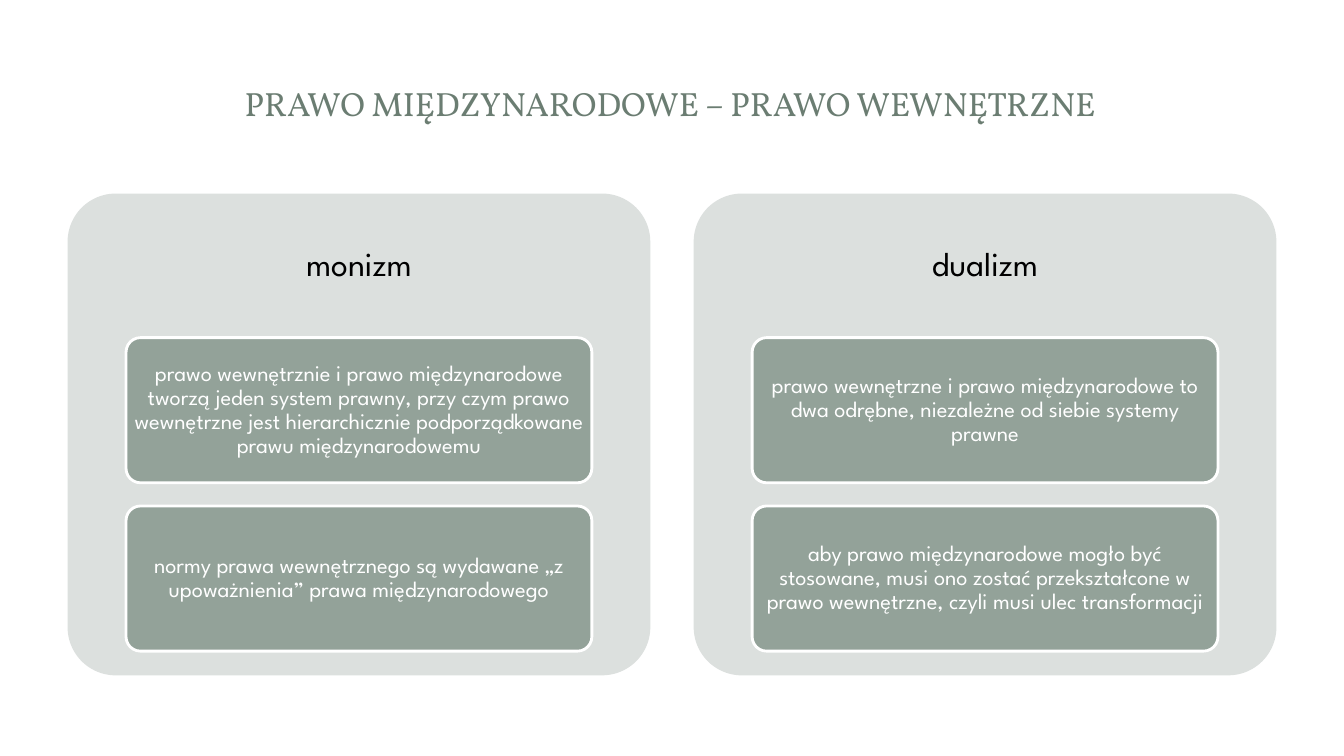
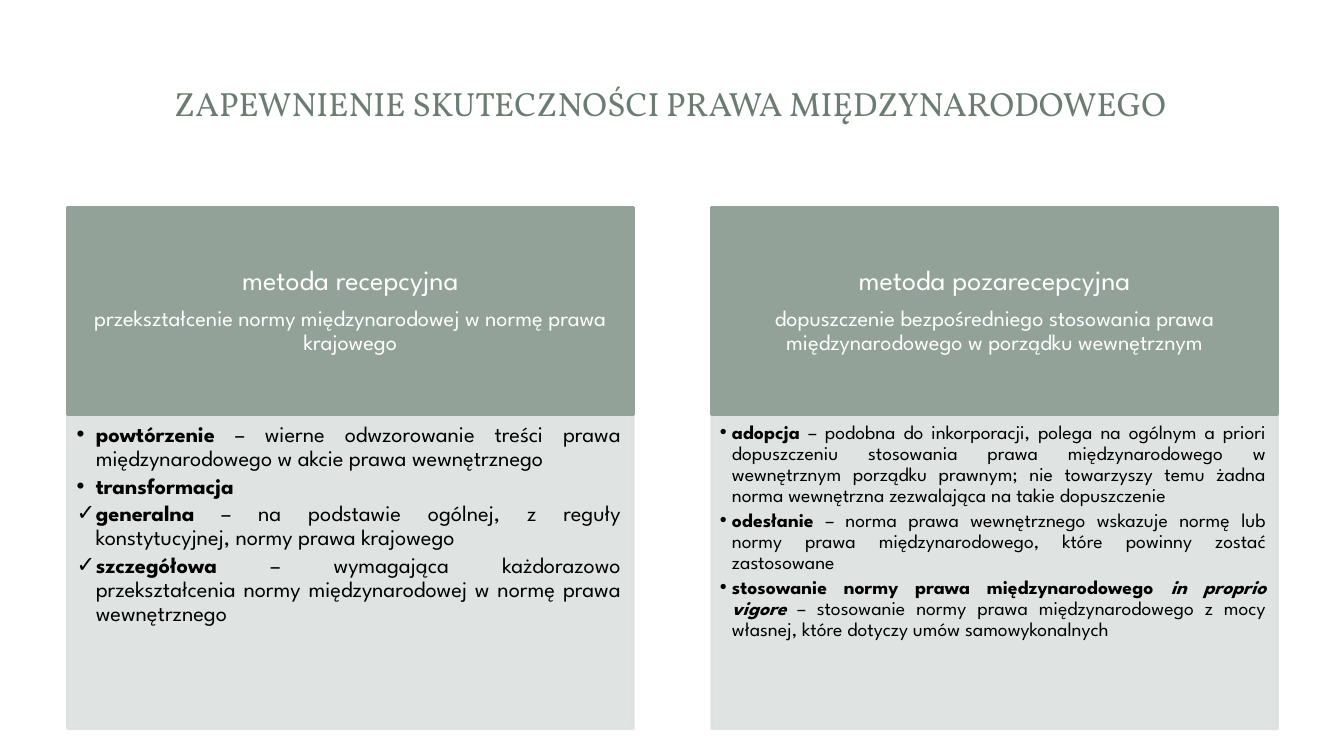
from lxml import etree
from pptx import Presentation
from pptx import util as u
from pptx.dml.color import RGBColor
from pptx.enum import shapes, text
from pptx.oxml.ns import qn

PX = 9144  # EMU in one px, 100 px to the inch
WHITE = RGBColor(0xFF, 0xFF, 0xFF)
BLACK = RGBColor(0x00, 0x00, 0x00)
SAGE = RGBColor(0x93, 0xA2, 0x99)
MIST = RGBColor(0xDC, 0xE0, 0xDE)
MOSS = RGBColor(0x6B, 0x7D, 0x72)
TITLE_FONT = "Vollkorn"
BODY_FONT = "League Spartan"
TWO_CONTENT, TITLE_ONLY = 3, 5
BOLD, BOLD_ITALIC, PLAIN = "b", "bi", ""


def px(*lengths):
    return [u.Emu(length * PX) for length in lengths]


def set_opacity(box, percent):
    """Make the fill and the line of a box partly transparent."""
    for color in box.element.spPr.iter(qn("a:srgbClr")):
        etree.SubElement(color, qn("a:alpha"), val=str(percent * 1000))


class Deck:
    def __init__(self):
        self.file = Presentation()
        self.file.slide_width, self.file.slide_height = px(1333, 750)
        self.page = None

    def add_page(self, layout, title):
        self.page = self.file.slides.add_slide(self.file.slide_layouts[layout])
        box = self.page.shapes.title
        self.place(box, 62, 45, 1205, 114)
        self.prepare(box.text_frame, (10, 5, 10, 5))
        self.set_words(box.text_frame.paragraphs[0], title, 24, MOSS, TITLE_FONT)

    def place(self, box, left, top, width, height):
        box.left, box.top, box.width, box.height = px(left, top, width, height)

    def prepare(self, frame, margins, anchor=text.MSO_ANCHOR.MIDDLE):
        frame.word_wrap = True
        frame.auto_size = text.MSO_AUTO_SIZE.NONE
        frame.vertical_anchor = anchor
        (frame.margin_left, frame.margin_top,
         frame.margin_right, frame.margin_bottom) = px(*margins)

    def set_words(self, para, words, size, color, font=BODY_FONT):
        para.text = words
        para.alignment = text.PP_ALIGN.CENTER
        self.style(para, size, color, font)

    def style(self, para, size, color, font=BODY_FONT):
        para.font.size = u.Pt(size)
        para.font.name = font
        para.font.color.rgb = color

    def space(self, para, after):
        para.line_spacing = 0.9
        para.space_before = u.Pt(0)
        para.space_after = u.Pt(after)

    def set_lines(self, frame, lines, color):
        """Fill a frame with centred (words, size) lines."""
        for index, (words, size) in enumerate(lines):
            para = frame.add_paragraph() if index else frame.paragraphs[0]
            self.space(para, 7 if index < len(lines) - 1 else 0)
            self.set_words(para, words, size, color)

    def block(self, kind, place, fill, line=None, lines=(), margins=(4, 3, 4, 3)):
        box = self.page.shapes.add_shape(kind, *px(*place))
        box.shadow.inherit = False
        box.fill.solid()
        box.fill.fore_color.rgb = fill
        if kind == shapes.MSO_SHAPE.ROUNDED_RECTANGLE:
            box.adjustments[0] = 0.1
        if line is None:
            box.line.fill.background()
        else:
            box.line.color.rgb = line
            box.line.width = u.Pt(2)
        self.prepare(box.text_frame, margins)
        self.set_lines(box.text_frame, lines, WHITE)

    def label(self, place, words, size):
        box = self.page.shapes.add_textbox(*px(*place))
        self.prepare(box.text_frame, (10, 10, 10, 10))
        self.set_lines(box.text_frame, [(words, size)], BLACK)

    def bullet_list(self, index, place, items, size, indent, margins):
        """Fill a body placeholder with (bullet, spans) items."""
        box = self.page.placeholders[index]
        self.place(box, *place)
        box.fill.solid()
        box.fill.fore_color.rgb = MIST
        box.line.color.rgb = MIST
        box.line.width = u.Pt(2)
        set_opacity(box, 90)
        frame = box.text_frame
        self.prepare(frame, margins, text.MSO_ANCHOR.TOP)
        for number, (bullet, spans) in enumerate(items):
            para = frame.add_paragraph() if number else frame.paragraphs[0]
            para.alignment = text.PP_ALIGN.JUSTIFY
            self.space(para, 2.3)
            self.set_bullet(para, bullet, indent)
            self.style(para, size, BLACK)
            for words, look in spans:
                span = para.add_run()
                span.text = words
                span.font.bold = "b" in look
                span.font.italic = "i" in look

    def set_bullet(self, para, bullet, indent):
        props = para._p.get_or_add_pPr()
        props.set("marL", str(indent * PX))
        props.set("indent", str(-indent * PX))
        etree.SubElement(props, qn("a:buFont"), typeface="Arial")
        etree.SubElement(props, qn("a:buChar"), char=bullet)


THEORIES = [
    ("monizm", [
        "prawo wewnętrznie i prawo międzynarodowe tworzą jeden system prawny, "
        "przy czym prawo wewnętrzne jest hierarchicznie podporządkowane prawu "
        "międzynarodowemu",
        "normy prawa wewnętrznego są wydawane „z upoważnienia” prawa "
        "międzynarodowego"]),
    ("dualizm", [
        "prawo wewnętrzne i prawo międzynarodowe to dwa odrębne, niezależne od "
        "siebie systemy prawne",
        "aby prawo międzynarodowe mogło być stosowane, musi ono zostać "
        "przekształcone w prawo wewnętrzne, czyli musi ulec transformacji"]),
]

RECEPTION = [
    ("•", [("powtórzenie", BOLD),
           (" – wierne odwzorowanie treści prawa międzynarodowego w akcie prawa "
            "wewnętrznego", PLAIN)]),
    ("•", [("transformacja", BOLD)]),
    ("✓", [("generalna", BOLD),
           (" – na podstawie ogólnej, z reguły konstytucyjnej, normy prawa "
            "krajowego", PLAIN)]),
    ("✓", [("szczegółowa", BOLD),
           (" – wymagająca każdorazowo przekształcenia normy międzynarodowej w "
            "normę prawa wewnętrznego", PLAIN)]),
]

NON_RECEPTION = [
    ("•", [("adopcja ", BOLD),
           ("– podobna do inkorporacji, polega na ogólnym a priori dopuszczeniu "
            "stosowania prawa międzynarodowego w wewnętrznym porządku prawnym; nie "
            "towarzyszy temu żadna norma wewnętrzna zezwalająca na takie "
            "dopuszczenie", PLAIN)]),
    ("•", [("odesłanie ", BOLD),
           ("– norma prawa wewnętrznego wskazuje normę lub normy prawa "
            "międzynarodowego, które powinny zostać zastosowane", PLAIN)]),
    ("•", [("stosowanie normy prawa międzynarodowego ", BOLD),
           ("in proprio vigore", BOLD_ITALIC),
           (" – stosowanie normy prawa międzynarodowego z mocy własnej, które "
            "dotyczy umów samowykonalnych", PLAIN)]),
]

# heading, description, items, text size, indent, margins
METHODS = [
    ("metoda recepcyjna",
     "przekształcenie normy międzynarodowej w normę prawa krajowego",
     RECEPTION, 16, 19, (9, 9, 12, 14)),
    ("metoda pozarecepcyjna",
     "dopuszczenie bezpośredniego stosowania prawa międzynarodowego w porządku "
     "wewnętrznym",
     NON_RECEPTION, 14, 12, (8, 8, 11, 12)),
]


def build_theories(deck):
    deck.add_page(TITLE_ONLY, "PRAWO MIĘDZYNARODOWE – PRAWO WEWNĘTRZNE")
    rounded = shapes.MSO_SHAPE.ROUNDED_RECTANGLE
    for column, (name, claims) in enumerate(THEORIES):
        left = 67 + column * 621
        deck.block(rounded, (left, 192, 578, 478), MIST)
        deck.label((left, 192, 578, 143), name, 24)
        for row, claim in enumerate(claims):
            deck.block(rounded, (left + 58, 335 + row * 167, 462, 144), SAGE,
                       WHITE, [(claim, 16)])


def build_methods(deck):
    deck.add_page(TWO_CONTENT, "ZAPEWNIENIE SKUTECZNOŚCI PRAWA MIĘDZYNARODOWEGO")
    for column, (name, summary, items, size, indent, margins) in enumerate(METHODS):
        left = 67 + column * 639
        deck.block(shapes.MSO_SHAPE.RECTANGLE, (left, 206, 561, 205), SAGE, SAGE,
                   [(name, 20), (summary, 16)], (16, 9, 16, 9))
        deck.bullet_list(column + 1, (left, 411, 561, 312), items, size, indent,
                         margins)


def main():
    deck = Deck()
    build_theories(deck)
    build_methods(deck)
    deck.file.save("out.pptx")


if __name__ == "__main__":
    main()
